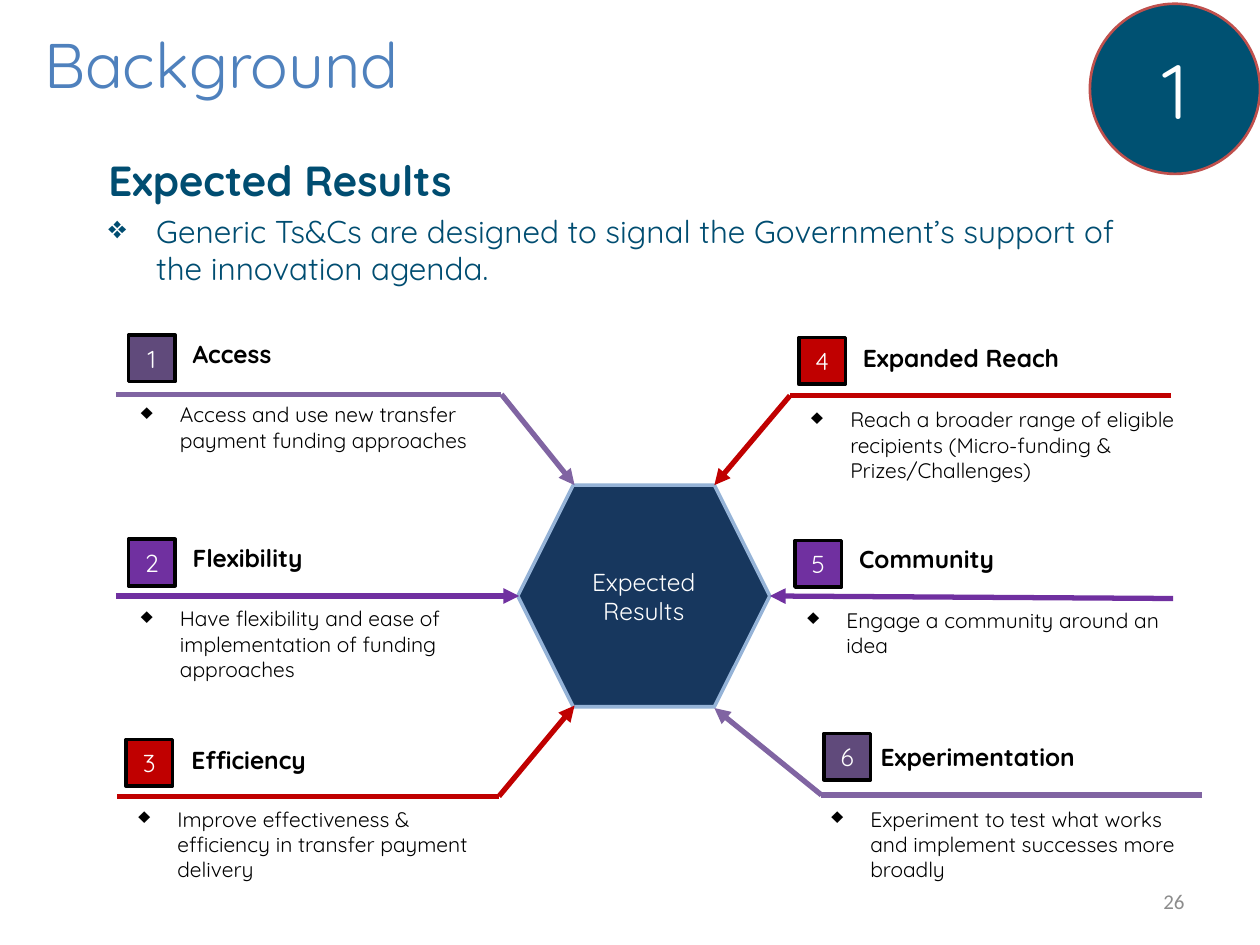
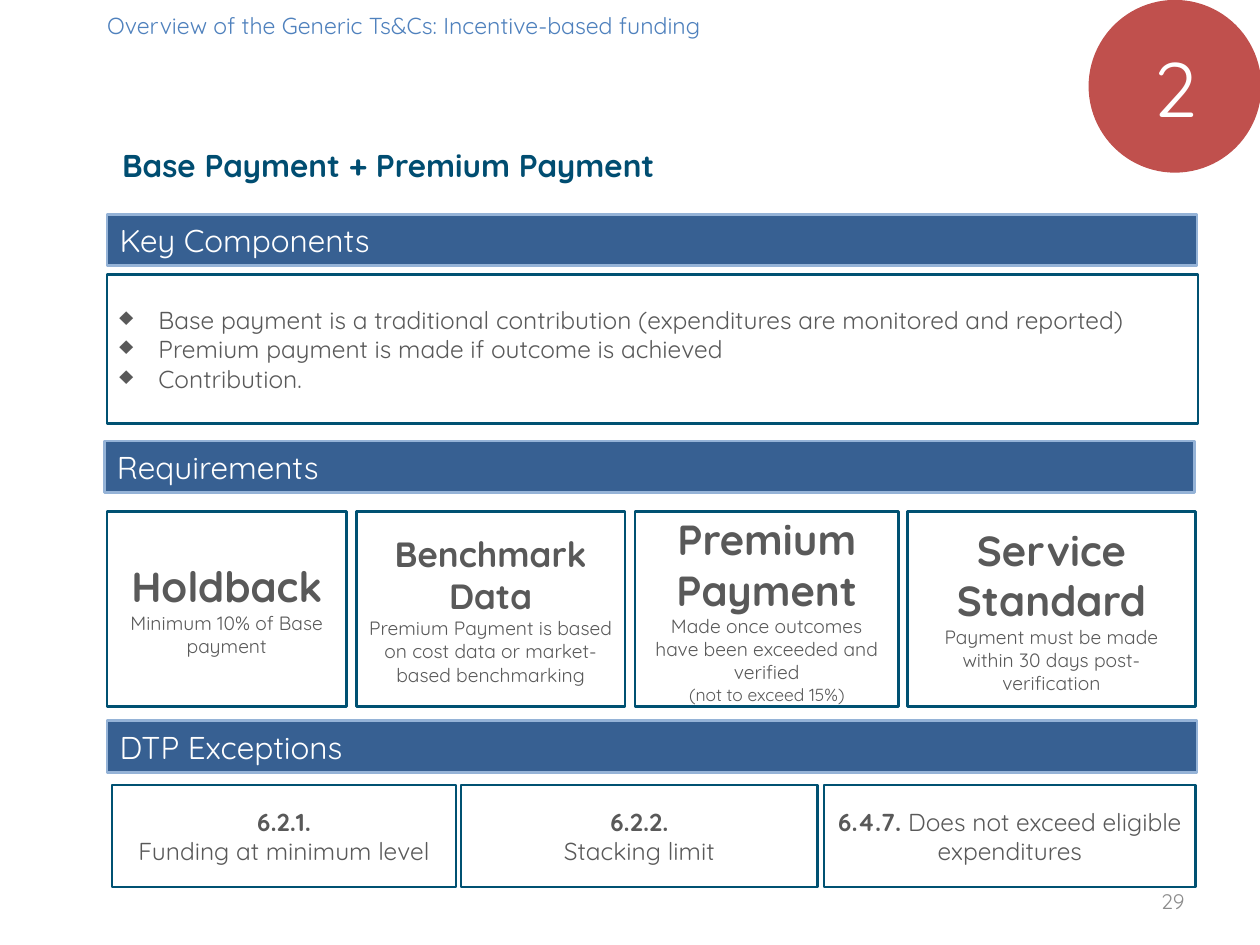
import pptx
import pptx.util
import pptx.dml.color
import pptx.enum.shapes
import pptx.enum.text
import pptx.oxml
import pptx.oxml.ns

Inches = pptx.util.Inches
Pt = pptx.util.Pt
RGBColor = pptx.dml.color.RGBColor
Shape = pptx.enum.shapes.MSO_SHAPE
Align = pptx.enum.text.PP_ALIGN
Anchor = pptx.enum.text.MSO_ANCHOR
Fit = pptx.enum.text.MSO_AUTO_SIZE

WHITE = RGBColor(0xFF, 0xFF, 0xFF)
BLACK = RGBColor(0x00, 0x00, 0x00)
GREY = RGBColor(0x59, 0x59, 0x59)
PALE = RGBColor(0x8C, 0x8C, 0x8C)
SKY = RGBColor(0x4F, 0x81, 0xBD)
MIST = RGBColor(0x95, 0xB3, 0xD7)
BLUE = RGBColor(0x37, 0x60, 0x92)
NAVY = RGBColor(0x17, 0x37, 0x5E)
TEAL = RGBColor(0x00, 0x51, 0x72)
DEEP = RGBColor(0x00, 0x4D, 0x71)
RED = RGBColor(0xC0, 0x00, 0x00)
BRICK = RGBColor(0xC0, 0x50, 0x4D)
GRAPE = RGBColor(0x70, 0x30, 0xA0)
PLUM = RGBColor(0x60, 0x4A, 0x7B)
LILAC = RGBColor(0x80, 0x64, 0xA2)
FONT = "Quicksand"


class Deck:
    """Shared style and the slide being drawn."""

    def __init__(self):
        self.show = pptx.Presentation()
        self.show.slide_width = Inches(10)
        self.show.slide_height = Inches(7.5)
        self.slide = None

    def start(self, title, spot, size, page, badge, top, fill, font=FONT, lead=None):
        self.slide = self.show.slides.add_slide(self.show.slide_layouts[6])
        self.text((7.17, 6.95, 2.33, 0.4), [[(page, 12, False)]], PALE,
                  align=Align.RIGHT, font=font, anchor=Anchor.MIDDLE)
        frame = self.text(spot, [[(title, size, False)]], SKY, inset=0)
        frame.paragraphs[0].line_spacing = lead
        self.shape(Shape.OVAL, (8.65, top, 1.35, 1.35), [[(badge, 44, False)]],
                   fill=fill, edge=BRICK)

    def words(self, frame, paras, color, align=Align.LEFT, font=FONT):
        for i, runs in enumerate(paras):
            para = frame.paragraphs[0] if i == 0 else frame.add_paragraph()
            para.alignment = align
            for words, size, bold in runs:
                run = para.add_run()
                run.text = words
                run.font.name = font
                run.font.size = Pt(size)
                run.font.bold = bold
                run.font.color.rgb = color

    def text(self, spot, paras, color, align=Align.LEFT, font=FONT, inset=None,
             anchor=Anchor.TOP, wrap=True, grow=False):
        frame = self.slide.shapes.add_textbox(*map(Inches, spot)).text_frame
        frame.word_wrap = wrap
        frame.vertical_anchor = anchor
        if grow:
            frame.auto_size = Fit.SHAPE_TO_FIT_TEXT
        if inset is not None:
            frame.margin_left = frame.margin_right = Inches(inset)
            frame.margin_top = frame.margin_bottom = Inches(inset)
        self.words(frame, paras, color, align, font)
        return frame

    def shape(self, kind, spot, paras, fill=None, edge=TEAL, width=1.5,
              color=WHITE, align=Align.CENTER):
        shape = self.slide.shapes.add_shape(kind, *map(Inches, spot))
        shape.shadow.inherit = False
        if fill is None:
            shape.fill.background()
        else:
            shape.fill.solid()
            shape.fill.fore_color.rgb = fill
        shape.line.color.rgb = edge
        shape.line.width = Pt(width)
        frame = shape.text_frame
        frame.vertical_anchor = Anchor.MIDDLE
        self.words(frame, paras, color, align)
        return frame

    def band(self, words, left, top):
        self.shape(Shape.RECTANGLE, (left, top, 8.65, 0.41), [[(words, 18, False)]],
                   fill=BLUE, edge=MIST, align=Align.LEFT)

    def card(self, spot, paras, align=Align.CENTER):
        return self.shape(Shape.RECTANGLE, spot, paras, color=GREY, align=align)

    def bullet(self, para, mark, dent):
        props = para._p.get_or_add_pPr()
        props.set("marL", str(int(Inches(dent))))
        props.set("indent", str(-int(Inches(dent))))
        sign = pptx.oxml.parse_xml("<a:buChar %s/>" % pptx.oxml.ns.nsdecls("a"))
        sign.set("char", mark)
        props.append(sign)

    def route(self, points, color):
        legs = list(zip(points, points[1:]))
        for i, (start, end) in enumerate(legs):
            line = self.slide.shapes.add_connector(
                pptx.enum.shapes.MSO_CONNECTOR.STRAIGHT, *map(Inches, start + end))
            line.line.color.rgb = color
            line.line.width = Pt(3)
            props = line.element.spPr
            if i == len(legs) - 1:
                props.find(pptx.oxml.ns.qn("a:ln")).append(pptx.oxml.parse_xml(
                    '<a:tailEnd %s type="triangle"/>' % pptx.oxml.ns.nsdecls("a")))
            props.append(pptx.oxml.parse_xml(
                "<a:effectLst %s/>" % pptx.oxml.ns.nsdecls("a")))

    def result(self, number, head, note, fill, color, tile, label, body, points):
        self.route(points, color)
        self.shape(Shape.RECTANGLE, tile + (0.37, 0.37), [[(number, 14, False)]],
                   fill=fill, edge=BLACK, width=2)
        self.text(label, [[(head, 14, True)]], BLACK, wrap=False, grow=True)
        frame = self.text(body, [[(note, 12, False)]], BLACK, grow=True)
        self.bullet(frame.paragraphs[0], "♦", 0.31)


RESULTS = [
    ("Access", "Access and use new transfer payment funding approaches", PLUM, LILAC,
     (1.02, 2.66), (1.43, 2.64, 1.11, 0.42), (1.02, 3.14, 3.1, 0.88),
     [(0.92, 3.13), (3.98, 3.13), (4.56, 3.85)]),
    ("Flexibility", "Have flexibility and ease of implementation of funding approaches",
     GRAPE, GRAPE, (1.02, 4.28), (1.43, 4.26, 1.33, 0.42), (1.02, 4.76, 3.1, 0.71),
     [(0.92, 4.73), (4.12, 4.73)]),
    ("Efficiency", "Improve effectiveness & efficiency in transfer payment delivery",
     RED, RED, (1, 5.87), (1.42, 5.86, 1.38, 0.42), (1, 6.35, 3.1, 0.71),
     [(0.93, 6.32), (3.96, 6.32), (4.56, 5.6)]),
    ("Expanded Reach",
     "Reach a broader range of eligible recipients (Micro-funding & Prizes/Challenges)",
     RED, RED, (6.34, 2.68), (6.75, 2.67, 1.84, 0.34), (6.34, 3.18, 3.1, 0.71),
     [(9.29, 3.14), (6.27, 3.14), (5.67, 3.85)]),
    ("Community", "Engage a community around an idea", GRAPE, GRAPE,
     (6.31, 4.29), (6.72, 4.27, 1.3, 0.34), (6.31, 4.77, 3.1, 0.5),
     [(9.31, 4.75), (6.11, 4.73)]),
    ("Experimentation", "Experiment to test what works and implement successes more broadly",
     PLUM, LILAC, (6.54, 5.82), (6.89, 5.84, 1.75, 0.34), (6.5, 6.35, 3.1, 0.71),
     [(9.54, 6.31), (6.52, 6.31), (5.67, 5.62)]),
]

POINTS = [
    "Base payment is a traditional contribution (expenditures are monitored and reported)",
    "Premium payment is made if outcome is achieved",
    "Contribution.",
]

NEEDS = [
    (0.85, 1.9, "Holdback", 24, [("Minimum 10% of Base payment", 11)]),
    (2.83, 2.13, "Benchmark Data", 20,
     [("Premium Payment is based on cost data or market-based benchmarking", 11)]),
    (5.04, 2.09, "Premium Payment", 24,
     [("Made once outcomes have been exceeded and verified", 11),
      ("(not to exceed 15%)", 10)]),
    (7.2, 2.29, "Service Standard", 24,
     [("Payment must be made within 30 days post-verification", 11)]),
]

LIMITS = [
    (0.89, 2.73, [[("6.2.1.", 14, True)], [("Funding at minimum level", 14, False)]]),
    (3.66, 2.83, [[("6.2.2.", 14, True)], [("Stacking limit", 14, False)]]),
    (6.54, 2.95, [[("6.4.7.", 14, True),
                   (" Does not exceed eligible expenditures", 14, False)]]),
]


def results(deck):
    deck.start("Background", (0.35, 0.2, 8.94, 0.71), 36, "26", "1", 0.03, TEAL,
               font="Calibri")
    goal = ("Generic Ts&Cs are designed to signal the Government’s support of "
            "the innovation agenda.")
    frame = deck.text((0.86, 1.23, 8.28, 5.79),
                      [[("Expected Results", 24, True)], [(goal, 18, False)]],
                      DEEP, inset=0)
    deck.bullet(frame.paragraphs[1], "❖", 0.38)
    frame.paragraphs[1].space_before = Pt(3.6)
    deck.shape(Shape.HEXAGON, (4.11, 3.85, 2, 1.76), [[("Expected Results", 14, False)]],
               fill=NAVY, edge=MIST, width=2)
    for number, item in enumerate(RESULTS, 1):
        deck.result(str(number), *item)


def funding(deck):
    deck.start("Overview of the Generic Ts&Cs: Incentive-based funding",
               (0.85, 0.13, 7.18, 0.75), 13.2, "29", "2", 0.01, BRICK, lead=0.8)
    deck.text((0.87, 1.11, 4.48, 0.4), [[("Base Payment + Premium Payment", 18, True)]],
              DEEP, wrap=False, grow=True)
    deck.band("Key Components", 0.85, 1.7)
    frame = deck.card((0.85, 2.18, 8.66, 1.18),
                      [[(point, 14, False)] for point in POINTS], Align.LEFT)
    for para in frame.paragraphs:
        deck.bullet(para, "♦", 0.31)
    deck.band("Requirements", 0.83, 3.5)
    for left, width, head, size, notes in NEEDS:
        deck.card((left, 4.06, width, 1.55),
                  [[(head, size, True)]] + [[(note, small, False)] for note, small in notes])
    deck.band("DTP Exceptions", 0.85, 5.72)
    for left, width, paras in LIMITS:
        deck.card((left, 6.23, width, 0.81), paras)


def main():
    deck = Deck()
    results(deck)
    funding(deck)
    deck.show.save("out.pptx")


if __name__ == "__main__":
    main()
